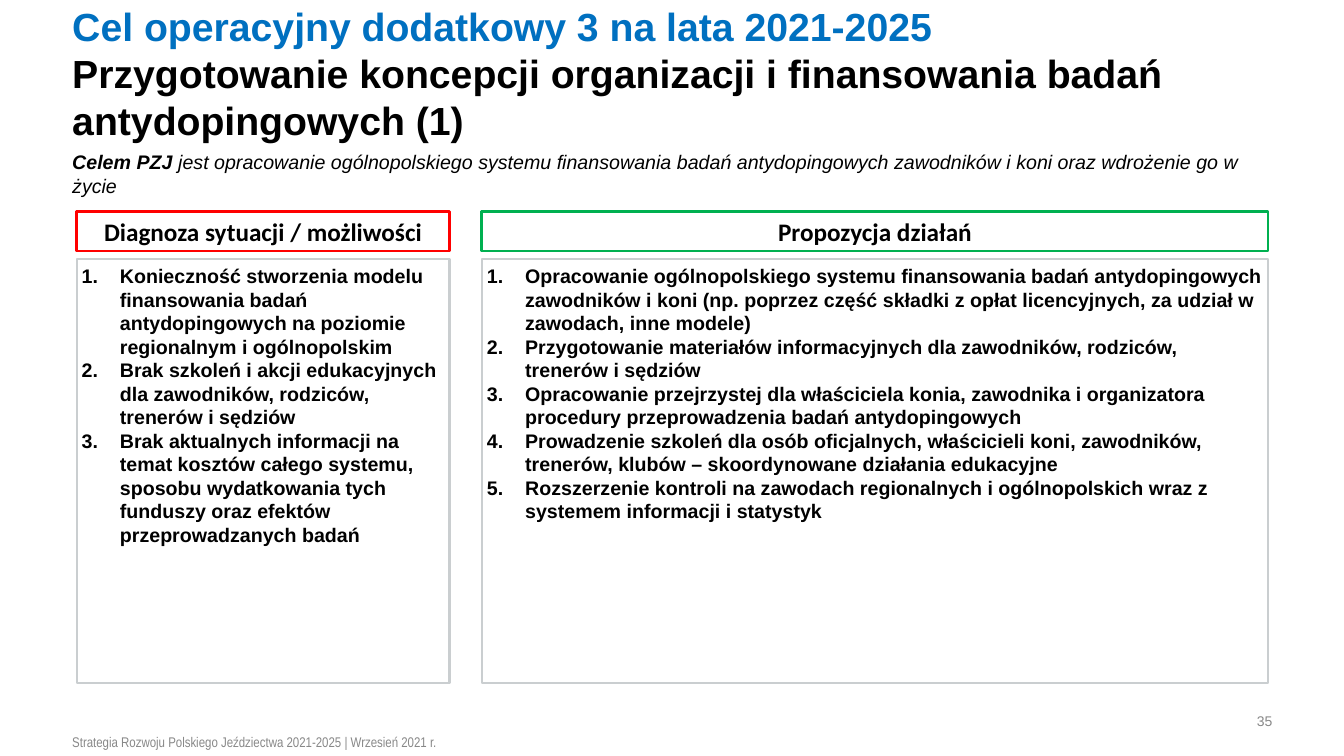
import pptx
import pptx.dml.color
import pptx.enum.shapes
import pptx.enum.text
import pptx.oxml.ns
import pptx.util
from lxml import etree

BLACK = pptx.dml.color.RGBColor(0x00, 0x00, 0x00)
BLUE = pptx.dml.color.RGBColor(0x00, 0x70, 0xC0)
RED = pptx.dml.color.RGBColor(0xFF, 0x00, 0x00)
GREEN = pptx.dml.color.RGBColor(0x00, 0xB0, 0x50)
SILVER = pptx.dml.color.RGBColor(0xCA, 0xCE, 0xD0)
GREY = pptx.dml.color.RGBColor(0x88, 0x88, 0x88)

ALIGN = pptx.enum.text.PP_ALIGN
ANCHOR = pptx.enum.text.MSO_ANCHOR

HEADING_ROW, HEADING_ROWS = 28, 5.2
LIST_ROW, LIST_ROWS = 34.27, 56.13

PANELS = [
    (5.7, 27.75, RED, "Diagnoza sytuacji / możliwości", [
        "Konieczność stworzenia modelu finansowania badań antydopingowych na poziomie "
        "regionalnym i ogólnopolskim",
        "Brak szkoleń i akcji edukacyjnych dla zawodników, rodziców, trenerów i sędziów",
        "Brak aktualnych informacji na temat kosztów całego systemu, sposobu wydatkowania "
        "tych funduszy oraz efektów przeprowadzanych badań",
    ]),
    (35.85, 58.5, GREEN, "Propozycja działań", [
        "Opracowanie ogólnopolskiego systemu finansowania badań antydopingowych zawodników "
        "i koni (np. poprzez część składki z opłat licencyjnych, za udział w zawodach, "
        "inne modele)",
        "Przygotowanie materiałów informacyjnych dla zawodników, rodziców, trenerów i sędziów",
        "Opracowanie przejrzystej dla właściciela konia, zawodnika i organizatora procedury "
        "przeprowadzenia badań antydopingowych",
        "Prowadzenie szkoleń dla osób oficjalnych, właścicieli koni, zawodników, trenerów, "
        "klubów – skoordynowane działania edukacyjne",
        "Rozszerzenie kontroli na zawodach regionalnych i ogólnopolskich wraz z systemem "
        "informacji i statystyk",
    ]),
]


class StrategySlide:
    """Styled slide on a grid of 100 columns and 100 rows."""

    styles = {
        "title": {"name": "Arial", "size": pptx.util.Pt(28), "bold": True},
        "goal": {"name": "Arial", "size": pptx.util.Pt(14), "italic": True},
        "heading": {"name": "Calibri", "size": pptx.util.Pt(18), "bold": True},
        "list": {"name": "Arial", "size": pptx.util.Pt(14), "bold": True},
        "footer": {"name": "Arial Narrow", "size": pptx.util.Pt(10)},
        "number": {"name": "Arial", "size": pptx.util.Pt(10)},
    }
    inset = pptx.util.Inches(0.05)
    indent = pptx.util.Inches(0.38)

    def __init__(self, presentation):
        self.column = presentation.slide_width / 100
        self.row = presentation.slide_height / 100
        self.slide = presentation.slides.add_slide(presentation.slide_layouts[6])

    def place(self, left, top, width, height):
        return (round(left * self.column), round(top * self.row),
                round(width * self.column), round(height * self.row))

    def prepare(self, shape, anchor, wrap=True):
        values = {"word_wrap": wrap, "vertical_anchor": anchor}
        values.update({f"margin_{side}": self.inset
                       for side in ("left", "right", "top", "bottom")})
        for name, value in values.items():
            setattr(shape.text_frame, name, value)
        return shape.text_frame

    def add_run(self, paragraph, text, style, color=BLACK, **extra):
        run = paragraph.add_run()
        run.text = text
        for name, value in {**self.styles[style], **extra}.items():
            setattr(run.font, name, value)
        run.font.color.rgb = color

    def text(self, area, anchor=ANCHOR.MIDDLE, align=ALIGN.LEFT, wrap=True):
        box = self.slide.shapes.add_textbox(*self.place(*area))
        paragraph = self.prepare(box, anchor, wrap).paragraphs[0]
        paragraph.alignment = align
        return paragraph

    def frame(self, area, color, weight, anchor):
        shape = self.slide.shapes.add_shape(
            pptx.enum.shapes.MSO_SHAPE.RECTANGLE, *self.place(*area))
        shape.shadow.inherit = False
        shape.fill.background()
        shape.line.color.rgb = color
        shape.line.width = pptx.util.Pt(weight)
        return self.prepare(shape, anchor)

    def heading(self, area, color, title):
        paragraph = self.frame(area, color, 2, ANCHOR.MIDDLE).paragraphs[0]
        paragraph.alignment = ALIGN.CENTER
        self.add_run(paragraph, title, "heading")

    def numbered_list(self, area, items):
        text_frame = self.frame(area, SILVER, 1.5, ANCHOR.TOP)
        for index, item in enumerate(items):
            paragraph = text_frame.add_paragraph() if index else text_frame.paragraphs[0]
            paragraph.alignment = ALIGN.LEFT
            properties = paragraph._p.get_or_add_pPr()
            properties.set("marL", str(self.indent))
            properties.set("indent", str(-self.indent))
            etree.SubElement(properties, pptx.oxml.ns.qn("a:buAutoNum"), type="arabicPeriod")
            self.add_run(paragraph, item, "list")


def main():
    presentation = pptx.Presentation()
    presentation.slide_width = pptx.util.Inches(13.33)
    presentation.slide_height = pptx.util.Inches(7.5)
    page = StrategySlide(presentation)

    title = page.text((5, 4, 94.1, 11.33))
    page.add_run(title, "Cel operacyjny dodatkowy 3 na lata 2021-2025", "title", BLUE)
    title.add_line_break()
    page.add_run(title, "Przygotowanie koncepcji organizacji i finansowania badań "
                 "antydopingowych (1)", "title")

    goal = page.text((5, 19.2, 89.35, 7.6), ANCHOR.TOP)
    page.add_run(goal, "Celem PZJ ", "goal", bold=True)
    page.add_run(goal, "jest opracowanie ogólnopolskiego systemu finansowania badań "
                 "antydopingowych zawodników i koni oraz wdrożenie go w życie", "goal")

    for left, width, color, heading, items in PANELS:
        page.heading((left, HEADING_ROW, width, HEADING_ROWS), color, heading)
        page.numbered_list((left, LIST_ROW, width, LIST_ROWS), items)

    footer = page.text((5, 96.4, 65, 3.6))
    page.add_run(footer, "Strategia Rozwoju Polskiego Jeździectwa 2021-2025 | "
                 "Wrzesień 2021 r.", "footer", GREY)
    number = page.text((93.1, 93.6, 1.95, 3.6), align=ALIGN.RIGHT, wrap=False)
    page.add_run(number, "35", "number", GREY)

    presentation.save("out.pptx")


if __name__ == "__main__":
    main()
